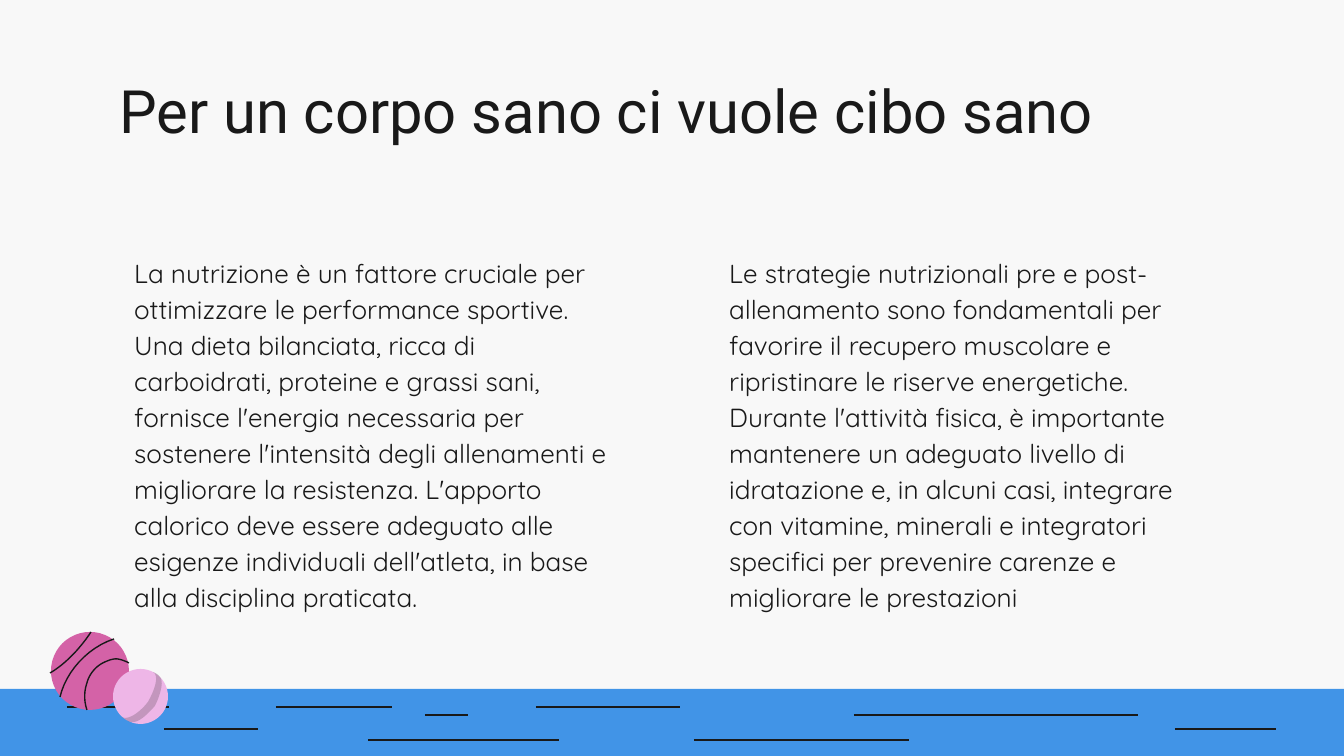
"""Build a slide on healthy food for a healthy body."""
from lxml.etree import SubElement
from pptx import Presentation
from pptx.dml.color import RGBColor
from pptx.enum.shapes import MSO_CONNECTOR as Connector, MSO_SHAPE as Shape
from pptx.enum.text import MSO_ANCHOR as Anchor, PP_ALIGN as Align
from pptx.oxml.ns import qn
from pptx.util import Pt

SCALE = 914400 / 134.4
WIDTH, HEIGHT = 1344, 756
COLORS = {"paper": "F8F8F8", "water": "4194E7", "ink": "191919",
          "ball": "D462A7", "small_ball": "EEB6E7"}
TITLE = "Per un corpo sano ci vuole cibo sano"
COLUMNS = [
    "La nutrizione è un fattore cruciale per ottimizzare le performance sportive. "
    "Una dieta bilanciata, ricca di carboidrati, proteine e grassi sani, fornisce "
    "l'energia necessaria per sostenere l'intensità degli allenamenti e migliorare "
    "la resistenza. L'apporto calorico deve essere adeguato alle esigenze "
    "individuali dell'atleta, in base alla disciplina praticata.",
    "Le strategie nutrizionali pre e post-allenamento sono fondamentali per favorire "
    "il recupero muscolare e ripristinare le riserve energetiche. Durante l'attività "
    "fisica, è importante mantenere un adeguato livello di idratazione e, in alcuni "
    "casi, integrare con vitamine, minerali e integratori specifici per prevenire "
    "carenze e migliorare le prestazioni",
]
COLUMN_LEFT, COLUMN_STEP = 121, 595
TITLE_FORMAT = {"name": "Roboto", "size": Pt(32)}
BODY_FORMAT = {"name": "Quicksand", "size": Pt(14)}
RIPPLES = {707: [(67, 169), (276, 392), (536, 680)],
           715: [(425, 468), (854, 1138)],
           729: [(164, 258), (1175, 1276)],
           740: [(368, 559), (694, 909)]}
SEAMS = [
    [(87, 710), (84, 701), (84, 692), (87, 683), (89, 675), (95, 667), (103, 663),
     (107, 661), (112, 659), (116, 659), (120, 659), (125, 661), (129, 663)],
    [(114, 639), (87, 648), (66, 672), (60, 697)],
    [(91, 632), (82, 646), (66, 664), (50, 673)],
]
STRIPE = [(153, 672), (159, 675), (156, 688), (148, 702), (141, 711), (132, 718),
          (125, 718), (124, 718), (123, 717), (122, 717), (124, 718), (127, 721),
          (130, 722), (138, 724), (147, 715), (155, 706), (161, 694), (164, 681),
          (160, 677), (158, 674), (155, 673), (153, 672)]
STEPS = 12


def px(*lengths):
    return [round(length * SCALE) for length in lengths]


def paint(fill, color):
    fill.solid()
    fill.fore_color.rgb = RGBColor.from_string(COLORS[color])


def add_solid(shapes, preset, box, color):
    solid = shapes.add_shape(preset, *px(*box))
    solid.shadow.inherit = False
    paint(solid.fill, color)
    solid.line.fill.background()


def add_text(shapes, text, box, font_format, spacing):
    frame = shapes.add_textbox(*px(*box)).text_frame
    margin = px(13.44)[0]
    frame_format = {"word_wrap": True, "vertical_anchor": Anchor.TOP}
    for side in ("left", "right", "top", "bottom"):
        frame_format[f"margin_{side}"] = margin
    for key, value in frame_format.items():
        setattr(frame, key, value)
    paragraph = frame.paragraphs[0]
    paragraph.alignment, paragraph.line_spacing = Align.LEFT, spacing
    run = paragraph.add_run()
    run.text = text
    for key, value in font_format.items():
        setattr(run.font, key, value)
    run.font.color.rgb = RGBColor.from_string(COLORS["ink"])


def bezier(p0, p1, p2, p3, t):
    return [(1 - t) ** 3 * a + 3 * (1 - t) ** 2 * t * b
            + 3 * (1 - t) * t ** 2 * c + t ** 3 * d
            for a, b, c, d in zip(p0, p1, p2, p3)]


def add_curve(shapes, controls, close):
    points = [px(*bezier(*controls[i:i + 4], step / STEPS))
              for i in range(0, len(controls) - 1, 3) for step in range(1, STEPS + 1)]
    builder = shapes.build_freeform(*px(*controls[0]), scale=1)
    builder.add_line_segments(points, close=close)
    curve = builder.convert_to_shape()
    curve.shadow.inherit = False
    return curve


def main():
    deck = Presentation()
    deck.slide_width, deck.slide_height = px(WIDTH, HEIGHT)
    slide = deck.slides.add_slide(deck.slide_layouts[6])
    paint(slide.background.fill, "paper")
    shapes = slide.shapes

    add_solid(shapes, Shape.RECTANGLE, (0, 689, WIDTH, HEIGHT - 689), "water")
    for y, spans in RIPPLES.items():
        for start, end in spans:
            ripple = shapes.add_connector(Connector.STRAIGHT, *px(start, y, end, y))
            paint(ripple.line.fill, "ink")
            ripple.line.width = Pt(0.75)
            SubElement(ripple._element.spPr, qn("a:effectLst"))

    add_text(shapes, TITLE, (106, 60, 1133, 94), TITLE_FORMAT, 1.0)
    for i, column in enumerate(COLUMNS):
        box = (COLUMN_LEFT + i * COLUMN_STEP, 239, 507, 373)
        add_text(shapes, column, box, BODY_FORMAT, 1.15)

    add_solid(shapes, Shape.OVAL, (51, 632, 78, 78), "ball")
    for controls in SEAMS:
        seam = add_curve(shapes, controls, False)
        seam.fill.background()
        paint(seam.line.fill, "ink")
        seam.line.width = Pt(0.75)

    add_solid(shapes, Shape.OVAL, (113, 669, 55, 55), "small_ball")
    stripe = add_curve(shapes, STRIPE, True)
    paint(stripe.fill, "ink")
    stripe.line.fill.background()
    tint = stripe._element.spPr.find(qn("a:solidFill"))[0]
    SubElement(tint, qn("a:alpha"), val="20000")

    deck.save("out.pptx")


if __name__ == "__main__":
    main()
